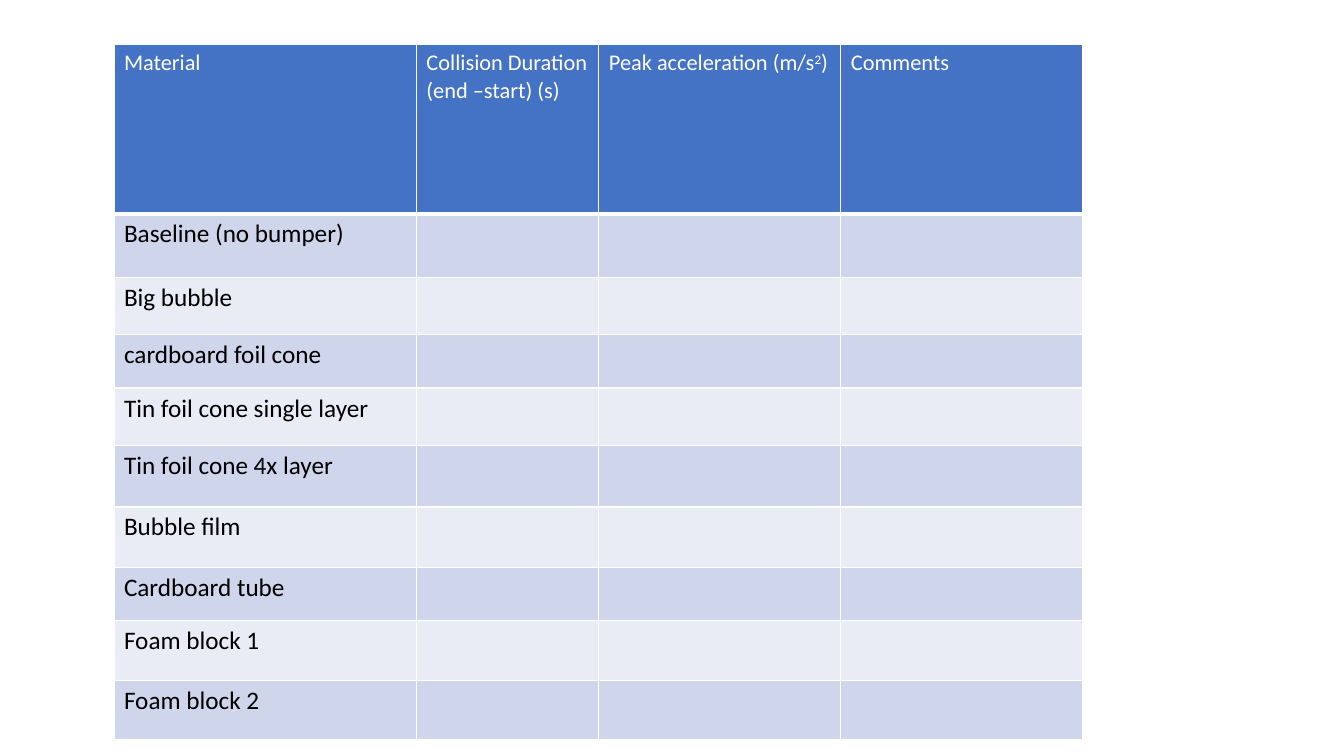
"""Build the bumper material collision results table slide."""
from lxml.etree import SubElement
from pptx import Presentation
from pptx.dml.color import RGBColor
from pptx.oxml.ns import qn
from pptx.util import Inches, Pt

HEADERS = [
    [("Material", 0)],
    [("Collision Duration (end –start) (s)", 0)],
    [("Peak acceleration (m/s", 0), ("2", 30000), (")", 0)],
    [("Comments", 0)],
]
MATERIALS = [
    "Baseline (no bumper)",
    "Big bubble",
    "cardboard foil cone",
    "Tin foil cone single layer",
    "Tin foil cone 4x layer",
    "Bubble film",
    "Cardboard tube",
    "Foam block 1",
    "Foam block 2",
]
COLUMN_WIDTHS = [3, 1.81, 2.4, 2.4]
ROW_HEIGHTS = [1.68, 0.63, 0.57, 0.53, 0.57, 0.61, 0.6, 0.53, 0.59, 0.59]
TABLE_LEFT, TABLE_TOP = 1.13, 0.44

FONT = "Calibri"
WHITE = RGBColor(0xFF, 0xFF, 0xFF)
BLACK = RGBColor(0x00, 0x00, 0x00)
HEADER_BLUE = RGBColor(0x44, 0x72, 0xC4)
BAND_DARK = RGBColor(0xCF, 0xD5, 0xEA)
BAND_LIGHT = RGBColor(0xE9, 0xEB, 0xF5)


def add_borders(cell, bottom_width):
    properties = cell._tc.get_or_add_tcPr()
    widths = {"a:lnL": 1, "a:lnR": 1, "a:lnT": 1, "a:lnB": bottom_width}
    for tag, width in widths.items():
        line = SubElement(properties, qn(tag), w=str(Pt(width)))
        fill = SubElement(line, qn("a:solidFill"))
        SubElement(fill, qn("a:srgbClr"), val=str(WHITE))


def style_cell(cell, color, bottom_width):
    add_borders(cell, bottom_width)
    cell.fill.solid()
    cell.fill.fore_color.rgb = color


def add_run(cell, text, size, color, baseline=0):
    run = cell.text_frame.paragraphs[0].add_run()
    run.text = text
    run.font.name = FONT
    run.font.size = Pt(size)
    run.font.bold = False
    run.font.color.rgb = color
    if baseline:
        run.font._element.set("baseline", str(baseline))


def add_results_table(slide):
    frame = slide.shapes.add_table(
        len(ROW_HEIGHTS), len(COLUMN_WIDTHS),
        Inches(TABLE_LEFT), Inches(TABLE_TOP),
        Inches(sum(COLUMN_WIDTHS)), Inches(sum(ROW_HEIGHTS)))
    table = frame.table
    for column, width in zip(table.columns, COLUMN_WIDTHS):
        column.width = Inches(width)
    for index, (row, height) in enumerate(zip(table.rows, ROW_HEIGHTS)):
        row.height = Inches(height)
        band = BAND_DARK if index % 2 else BAND_LIGHT
        for cell in row.cells:
            if index == 0:
                style_cell(cell, HEADER_BLUE, 3)
            else:
                style_cell(cell, band, 1)
    for column, runs in enumerate(HEADERS):
        for text, baseline in runs:
            add_run(table.cell(0, column), text, 16, WHITE, baseline)
    for row, material in enumerate(MATERIALS, start=1):
        add_run(table.cell(row, 0), material, 18, BLACK)


def main():
    presentation = Presentation()
    presentation.slide_width = Inches(13.33)
    presentation.slide_height = Inches(7.5)
    slide = presentation.slides.add_slide(presentation.slide_layouts[6])
    add_results_table(slide)
    presentation.save("out.pptx")


if __name__ == "__main__":
    main()
